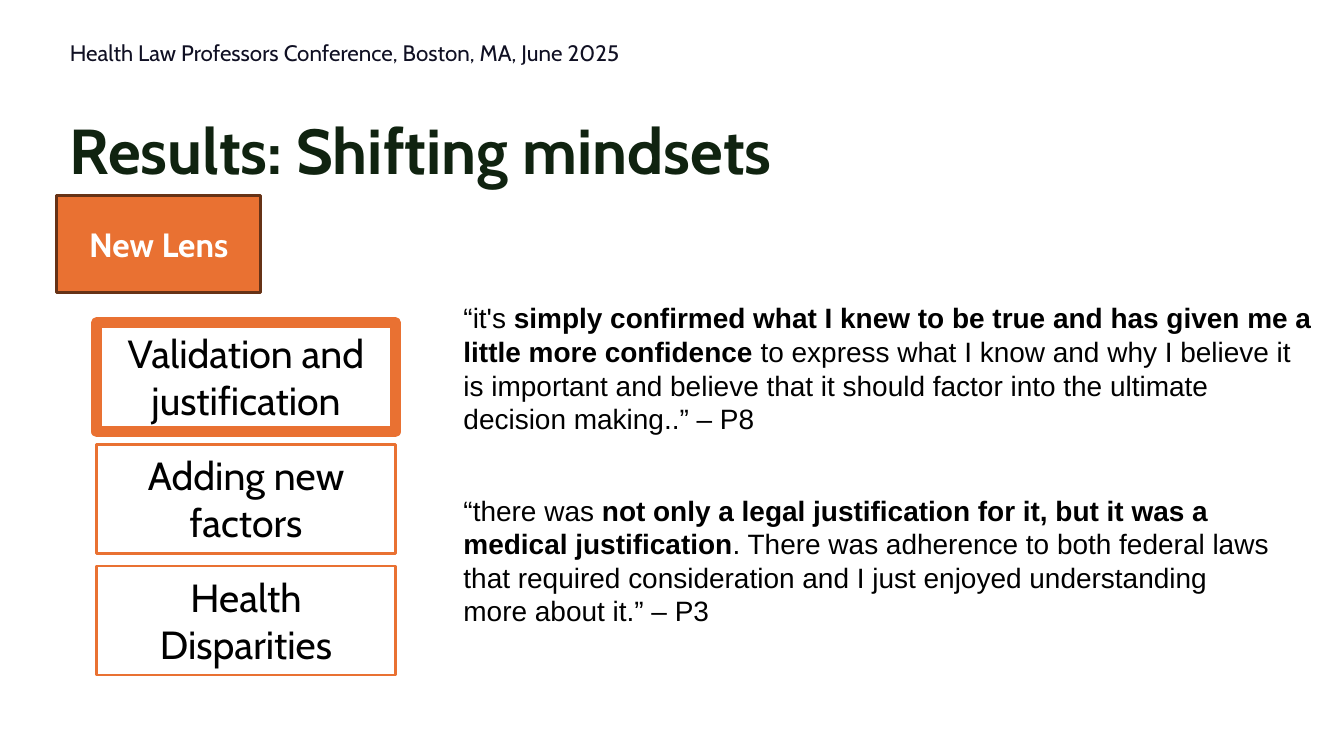
import pptx
import pptx.dml.color
import pptx.enum.shapes
import pptx.enum.text
import pptx.util

Cm = pptx.util.Cm
Pt = pptx.util.Pt
RGBColor = pptx.dml.color.RGBColor
ALIGN = pptx.enum.text.PP_ALIGN
ANCHOR = pptx.enum.text.MSO_ANCHOR

ORANGE = RGBColor(0xE9, 0x71, 0x32)
BROWN = RGBColor(0x66, 0x32, 0x16)
GREEN = RGBColor(0x10, 0x23, 0x10)
NAVY = RGBColor(0x10, 0x10, 0x23)
WHITE = RGBColor(0xFF, 0xFF, 0xFF)
BLACK = RGBColor(0, 0, 0)

THEMES = ["Validation and justification", "Adding new factors", "Health Disparities"]
QUOTES = [
    (
        "“it's **simply confirmed what I knew to be true and has given me a little more "
        "confidence** to express what I know and why I believe it is important and believe "
        "that it should factor into the ultimate decision making..” – P8",
        (8.51, 5.56, 16.56, 2.82),
    ),
    (
        "“there was **not only a legal justification for it, but it was a medical "
        "justification**. There was adherence to both federal laws that required "
        "consideration and I just enjoyed understanding more about it.” – P3",
        (8.51, 9.19, 15.8, 2.82),
    ),
]


def write_text(holder, text, size, color, font="Cabin", bold=False, align=ALIGN.LEFT,
               anchor=ANCHOR.TOP, inset=0.13, line_spacing=None, space_after=None):
    frame = holder.text_frame
    frame.word_wrap = True
    frame.vertical_anchor = anchor
    frame.margin_left = frame.margin_right = Cm(0.25)
    frame.margin_top = frame.margin_bottom = Cm(inset)
    paragraph = frame.paragraphs[0]
    paragraph.alignment = align
    paragraph.line_spacing = line_spacing
    paragraph.space_after = space_after
    for index, part in enumerate(text.split("**")):
        run = paragraph.add_run()
        run.text = part
        run.font.name = font
        run.font.size = Pt(size)
        run.font.bold = bold or index % 2 == 1
        run.font.color.rgb = color


def add_text(slide, box, text, **text_format):
    holder = slide.shapes.add_textbox(*map(Cm, box))
    write_text(holder, text, **text_format)


def add_panel(slide, box, text, fill, border, border_width, **text_format):
    panel = slide.shapes.add_shape(
        pptx.enum.shapes.MSO_SHAPE.RECTANGLE, *map(Cm, box))
    panel.shadow.inherit = False
    panel.fill.solid()
    panel.fill.fore_color.rgb = fill
    panel.line.color.rgb = border
    panel.line.width = Pt(border_width)
    write_text(panel, text, align=ALIGN.CENTER, **text_format)


def add_heading(slide, box):
    left, top, width, height = box
    add_text(slide, (left, top, width / 2, 0.89),
             "Health Law Professors Conference, Boston, MA, June 2025",
             size=12, color=NAVY, anchor=ANCHOR.MIDDLE, inset=0.25,
             line_spacing=0.9, space_after=Pt(12))
    title_height = 1.83
    add_text(slide, (left, top + height - title_height, width, title_height),
             "Results: Shifting mindsets", size=34, color=GREEN, bold=True,
             anchor=ANCHOR.BOTTOM, inset=0.25)


def add_lens_label(slide, box):
    add_panel(slide, box, "New Lens", ORANGE, BROWN, 1.5, size=18, color=WHITE,
              bold=True, anchor=ANCHOR.MIDDLE, inset=0.25)


def add_themes(slide, box, current):
    left, top, width, height = box
    theme_height = 2.06
    pitch = (height - theme_height) / (len(THEMES) - 1)
    for index, theme in enumerate(THEMES):
        add_panel(slide, (left, top + index * pitch, width, theme_height), theme,
                  WHITE, ORANGE, 6 if theme == current else 1.5, size=21, color=BLACK)


def add_quote(slide, box, quote):
    add_text(slide, box, quote, size=15, color=BLACK, font="Arial")


def main():
    deck = pptx.Presentation()
    deck.slide_width = Cm(25.4)
    deck.slide_height = Cm(14.29)
    slide = deck.slides.add_slide(deck.slide_layouts[6])
    add_heading(slide, (1.07, 0.58, 23.27, 3.2))
    add_lens_label(slide, (1.07, 3.7, 3.86, 1.83))
    add_themes(slide, (1.83, 6.1, 5.64, 6.66), current=THEMES[0])
    for quote, box in QUOTES:
        add_quote(slide, box, quote)
    deck.save("out.pptx")


if __name__ == "__main__":
    main()
